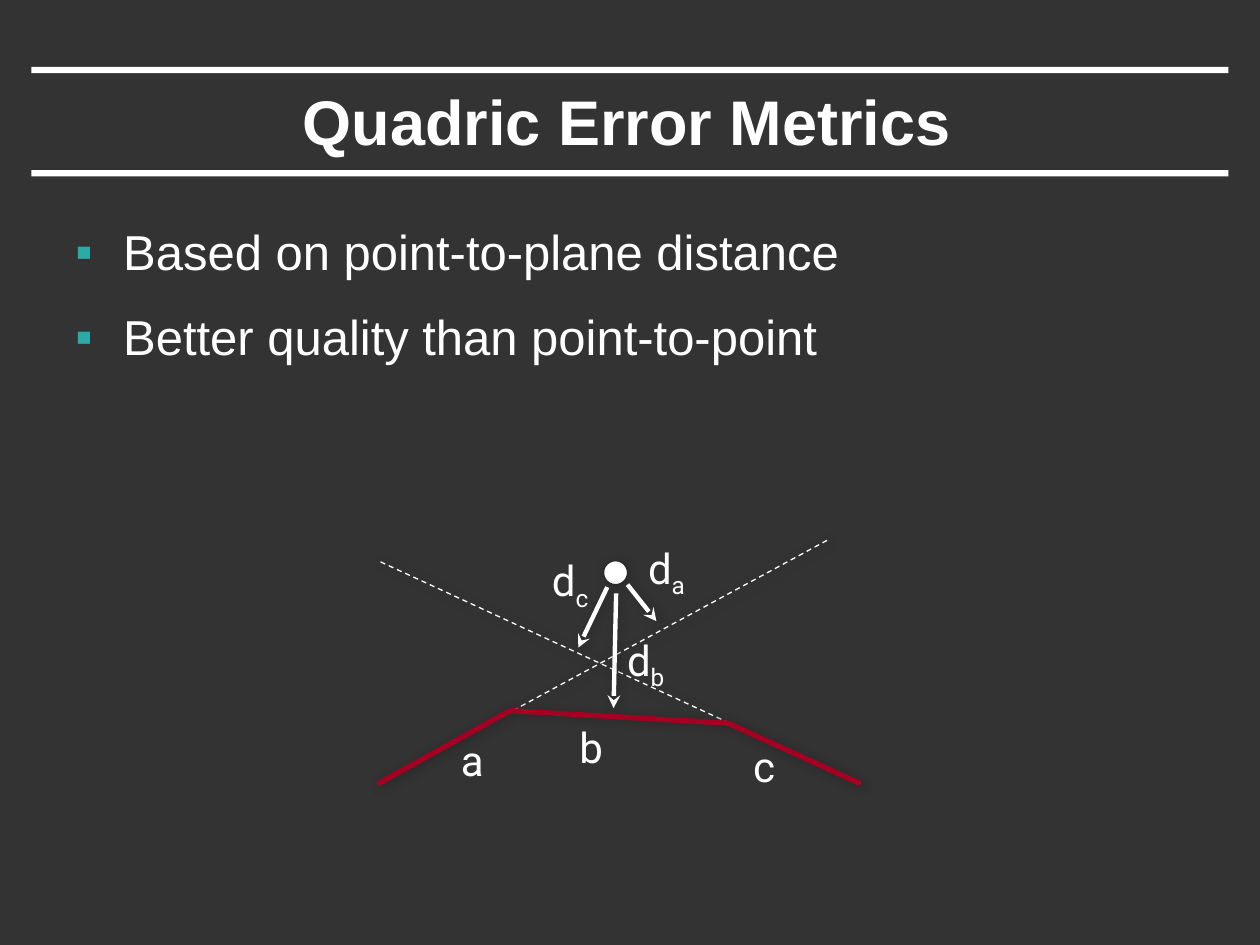
from lxml.etree import SubElement
from pptx import Presentation
from pptx.dml.color import RGBColor
from pptx.enum.dml import MSO_LINE
from pptx.enum.shapes import MSO_CONNECTOR, MSO_SHAPE
from pptx.enum.text import MSO_ANCHOR, MSO_AUTO_SIZE, PP_ALIGN
from pptx.oxml.ns import qn
from pptx.util import Inches, Pt

WHITE = RGBColor(0xFF, 0xFF, 0xFF)
DARK = RGBColor(0x33, 0x33, 0x33)
SHADE = RGBColor(0x29, 0x29, 0x29)
RED = RGBColor(0xA5, 0x00, 0x21)
TEAL = RGBColor(0x2A, 0xAB, 0xA8)


def add_shadow(shape, alpha=75, dist=1.4, angle=45):
    effects = SubElement(shape.element.spPr, qn("a:effectLst"))
    shadow = SubElement(effects, qn("a:outerShdw"), blurRad=str(Pt(5)),
                        dist=str(Pt(dist)), dir=str(angle * 60000))
    color = SubElement(shadow, qn("a:srgbClr"), val=str(SHADE))
    SubElement(color, qn("a:alpha"), val=str(alpha * 1000))


def add_run(p, text, size, font):
    r = p.add_run()
    r.text = text
    r.font.size = Pt(size)
    r.font.name = font
    r.font.color.rgb = WHITE
    return r


prs = Presentation()
prs.slide_width, prs.slide_height = Inches(10), Inches(7.5)
s = prs.slides.add_slide(prs.slide_layouts[5])
s.background.fill.solid()
s.background.fill.fore_color.rgb = DARK

# Title between two rules
for y in (1.35, 0.53):
    rule = s.shapes.add_shape(MSO_SHAPE.RECTANGLE, Inches(0.25), Inches(y),
                              Inches(9.5), Inches(0.05))
    rule.shadow.inherit = False
    rule.fill.solid()
    rule.fill.fore_color.rgb = WHITE
    rule.line.fill.background()

title = s.shapes.title
title.left, title.top = Inches(0.74), Inches(0.58)
title.width, title.height = Inches(8.47), Inches(0.75)
tf = title.text_frame
tf.vertical_anchor = MSO_ANCHOR.MIDDLE
p = tf.paragraphs[0]
p.alignment = PP_ALIGN.CENTER
add_run(p, "Quadric Error Metrics", 36, "Arial").font.bold = True

# Bullets
body = s.shapes.add_textbox(Inches(0.5), Inches(1.67), Inches(9), Inches(5.5))
tf = body.text_frame
tf.word_wrap = True
tf.margin_top = Inches(0.09)
for i, text in enumerate(["Based on point-to-plane distance",
                          "Better quality than point-to-point"]):
    p = tf.add_paragraph() if i else tf.paragraphs[0]
    p.space_after = Pt(15)
    pPr = p._p.get_or_add_pPr()
    pPr.set("marL", str(Inches(0.38)))
    pPr.set("indent", str(-Inches(0.38)))
    bullet_color = SubElement(pPr, qn("a:buClr"))
    SubElement(bullet_color, qn("a:srgbClr"), val=str(TEAL))
    SubElement(pPr, qn("a:buFont"), typeface="Arial")
    SubElement(pPr, qn("a:buChar"), char="▪")
    add_run(p, text, 28, "Arial")

# Planes of the outer faces, extended
for x1, y1, x2, y2 in [(6.83, 6.22, 3, 4.45), (3, 6.22, 6.58, 4.28)]:
    plane = s.shapes.add_connector(MSO_CONNECTOR.STRAIGHT, Inches(x1), Inches(y1),
                                   Inches(x2), Inches(y2))
    plane.line.color.rgb = WHITE
    plane.line.width = Pt(0.75)
    plane.line.dash_style = MSO_LINE.DASH
    add_shadow(plane)

# Surface with faces a, b and c
builder = s.shapes.build_freeform(Inches(3), Inches(6.22))
builder.add_line_segments([(Inches(x), Inches(y)) for x, y in
                           [(4.05, 5.64), (5.78, 5.74), (6.83, 6.22)]], close=False)
surface = builder.convert_to_shape()
surface.fill.background()
surface.line.color.rgb = RED
surface.line.width = Pt(3)
add_shadow(surface, alpha=100)

# Point and its distances to the planes
point = s.shapes.add_shape(MSO_SHAPE.OVAL, Inches(4.79), Inches(4.45),
                           Inches(0.19), Inches(0.19))
point.fill.solid()
point.fill.fore_color.rgb = WHITE
point.line.color.rgb = SHADE
point.line.width = Pt(0.75)
add_shadow(point)

for x1, y1, x2, y2, dist, angle in [(4.89, 4.71, 4.87, 5.62, 1.4, 45),
                                    (4.82, 4.66, 4.59, 5.14, 1.4, 45),
                                    (4.98, 4.64, 5.21, 4.93, 2.3, 25)]:
    arrow = s.shapes.add_connector(MSO_CONNECTOR.STRAIGHT, Inches(x1), Inches(y1),
                                   Inches(x2), Inches(y2))
    arrow.line.color.rgb = WHITE
    arrow.line.width = Pt(2.5)
    SubElement(arrow.line._get_or_add_ln(), qn("a:tailEnd"), type="stealth")
    add_shadow(arrow, dist=dist, angle=angle)

# Labels: text, subscript, left, top, width
for text, sub, x, y, w in [("a", "", 3.56, 5.78, 0.36), ("b", "", 4.5, 5.68, 0.38),
                           ("c", "", 5.88, 5.83, 0.36), ("d", "a", 5.04, 4.28, 0.5),
                           ("d", "b", 4.87, 5.01, 0.51), ("d", "c", 4.28, 4.38, 0.49)]:
    label = s.shapes.add_textbox(Inches(x), Inches(y), Inches(w), Inches(0.5))
    tf = label.text_frame
    tf.word_wrap = False
    tf.auto_size = MSO_AUTO_SIZE.SHAPE_TO_FIT_TEXT
    tf.vertical_anchor = MSO_ANCHOR.MIDDLE
    p = tf.paragraphs[0]
    p.alignment = PP_ALIGN.CENTER
    add_run(p, text, 24, "Roboto")
    if sub:
        r = add_run(p, sub, 24, "Roboto")
        r.font._element.set("baseline", "-25000")

prs.save("out.pptx")
